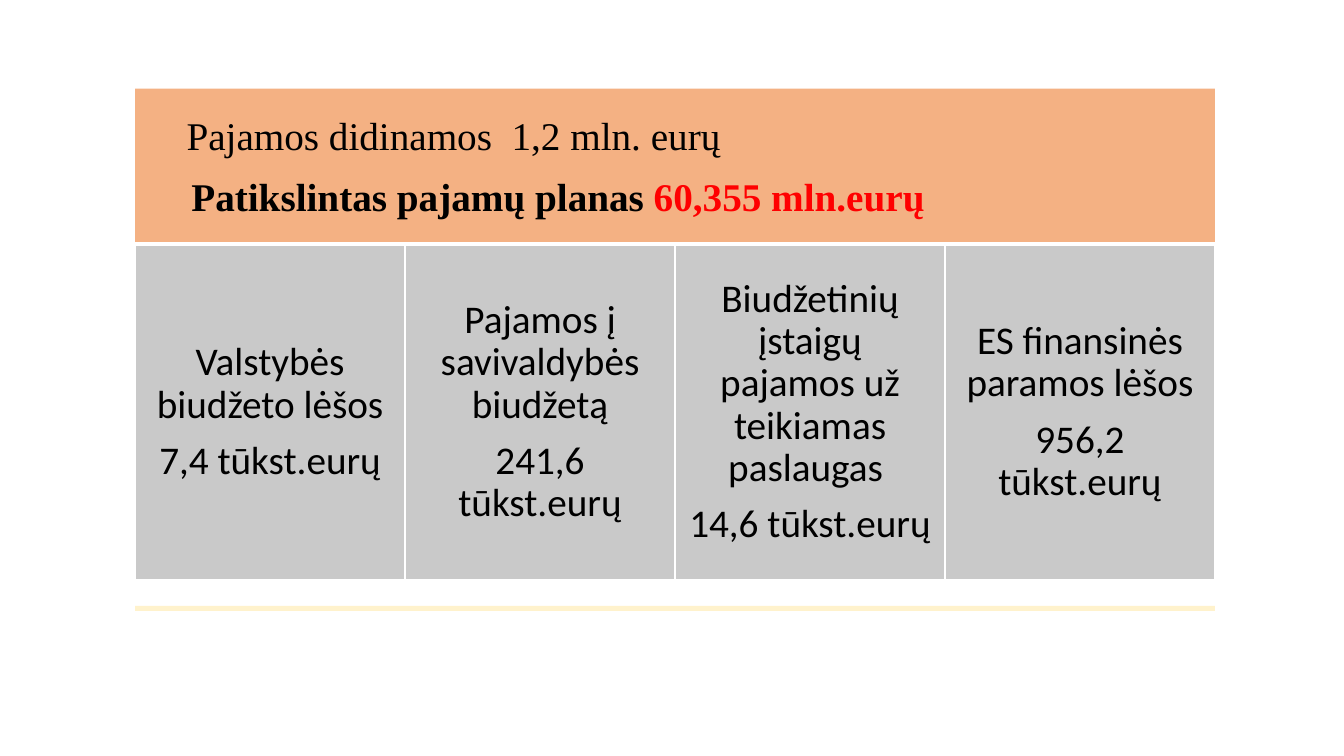
from pptx import Presentation, util as u
from pptx.dml.color import RGBColor
from pptx.enum import shapes, text

BLACK = RGBColor(0, 0, 0)
RED = RGBColor(0xFF, 0, 0)
WHITE = RGBColor(0xFF, 0xFF, 0xFF)
PEACH = RGBColor(0xF4, 0xB1, 0x83)
GREY = RGBColor(0xC9, 0xC9, 0xC9)
CREAM = RGBColor(0xFF, 0xF2, 0xCC)

TITLE = "Pajamos didinamos  1,2 mln. eurų"
PLAN = [("Patikslintas pajamų planas ", BLACK), ("60,355 mln.eurų", RED)]
CARDS = [
    ("Valstybės biudžeto lėšos", "7,4 tūkst.eurų"),
    ("Pajamos į savivaldybės biudžetą", "241,6 tūkst.eurų"),
    ("Biudžetinių įstaigų pajamos už teikiamas paslaugas ", "14,6 tūkst.eurų"),
    ("ES finansinės paramos lėšos", "956,2 tūkst.eurų"),
]
LEFT, WIDE = 1.34, 10.71
STEP = WIDE / len(CARDS)
PAD = u.Inches(0.12)
MID = text.MSO_ANCHOR.MIDDLE
FRAME = dict(word_wrap=True, auto_size=text.MSO_AUTO_SIZE.NONE,
             margin_left=PAD, margin_right=PAD, margin_top=PAD,
             margin_bottom=PAD, vertical_anchor=MID)
HEAD = FRAME | dict(margin_left=u.Inches(0.51), margin_top=u.Inches(0.28),
                    vertical_anchor=text.MSO_ANCHOR.TOP)
PARA = dict(line_spacing=0.9, space_after=u.Pt(9.8))
LEAD = PARA | dict(alignment=text.PP_ALIGN.LEFT)
BODY = PARA | dict(alignment=text.PP_ALIGN.CENTER)
SANS = dict(name="Calibri", size=u.Pt(28), bold=False)
SERIF = SANS | dict(name="Times New Roman")


def put(obj, vals):
    for key, val in vals.items():
        setattr(obj, key, val)


def write(para, runs, form, font):
    put(para, form)
    for words, ink in runs:
        run = para.add_run()
        run.text = words
        put(run.font, font)
        run.font.color.rgb = ink


def paint(shape, fill):
    shape.fill.solid()
    shape.fill.fore_color.rgb = fill
    shape.line.fill.background()


def rect(slide, box, fill):
    shape = slide.shapes.add_shape(shapes.MSO_SHAPE.RECTANGLE, *map(u.Inches, box))
    shape.shadow.inherit = False
    paint(shape, fill)
    return shape


def main():
    deck = Presentation()
    deck.slide_width, deck.slide_height = u.Inches(13.33), u.Inches(7.5)
    slide = deck.slides.add_slide(deck.slide_layouts[5])

    band = slide.shapes.title
    put(band, dict(zip(("left", "top", "width", "height"),
                       map(u.Inches, (LEFT, 0.88, WIDE, 1.52)))))
    paint(band, PEACH)
    put(band.text_frame, HEAD)
    write(band.text_frame.paragraphs[0], [(TITLE, BLACK)], LEAD, SERIF)

    for col, lines in enumerate(CARDS):
        card = rect(slide, (LEFT + col * STEP, 2.43, STEP, 3.32), GREY)
        card.line.color.rgb = WHITE
        card.line.width = u.Pt(1)
        frame = card.text_frame
        put(frame, FRAME)
        for row, line in enumerate(lines):
            para = frame.add_paragraph() if row else frame.paragraphs[0]
            write(para, [(line, BLACK)], BODY, SANS)

    rect(slide, (LEFT, 6.01, WIDE, 0.05), CREAM)

    plan = slide.shapes.add_textbox(*map(u.Inches, (1.8, 1.66, 8.9, 0.57)))
    plan.text_frame.word_wrap = True
    write(plan.text_frame.paragraphs[0], PLAN, {}, SERIF | dict(bold=True))
    deck.save("out.pptx")


if __name__ == "__main__":
    main()
